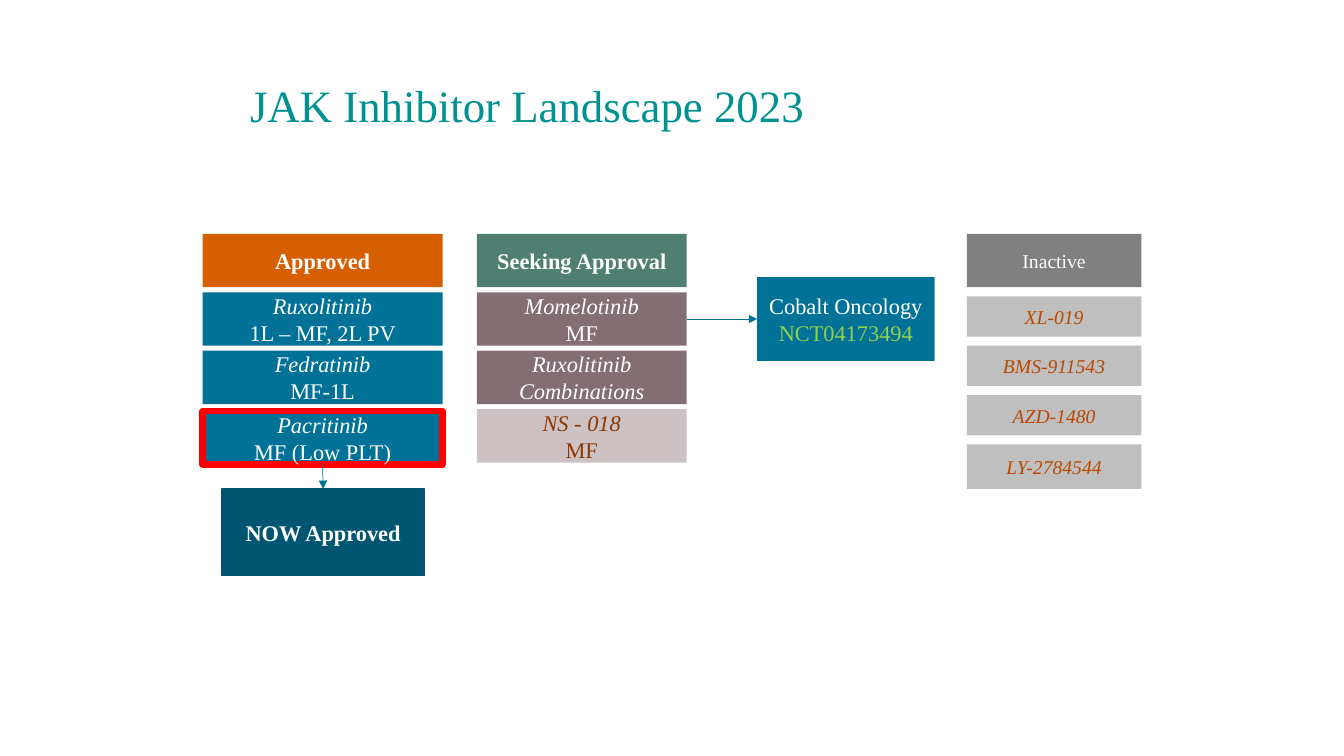
from lxml import etree
from pptx import Presentation
from pptx.dml.color import RGBColor
from pptx.enum.shapes import MSO_CONNECTOR, MSO_SHAPE
from pptx.enum.text import MSO_ANCHOR, PP_ALIGN
from pptx.oxml.ns import qn
from pptx.util import Inches, Pt

COLORS = {
    "title": "009193", "white": "FFFFFF", "blue": "007298", "navy": "005672",
    "navy_edge": "005470", "orange": "D65F00", "green": "4E7F71", "gray": "808080",
    "silver": "BFBFBF", "mauve": "846E73", "pale": "CCC2C4", "brown": "8D3600",
    "rust": "BC4800", "lime": "92D050", "red": "FF0000",
}
FONT = "Times New Roman"

# Grid: (left, width) of each column, and the rows they share
APPROVED, SEEKING, INACTIVE = (2.01, 2.38), (4.73, 2.08), (9.59, 1.73)
TOP, ROW_STEP, ROW_HEIGHT = 2.32, 0.58, 0.53
INACTIVE_TOP, INACTIVE_STEP = 2.94, 0.49

prs = Presentation()
prs.slide_width, prs.slide_height = Inches(13.33), Inches(7.5)
slide = prs.slides.add_slide(prs.slide_layouts[6])


def add_box(column, top, height, fill, lines, size=16, edge=None):
    """Filled rectangle; each line is (text, colour, style), style "b", "i" or ""."""
    left, width = column
    box = slide.shapes.add_shape(MSO_SHAPE.RECTANGLE, Inches(left), Inches(top),
                                 Inches(width), Inches(height))
    box.shadow.inherit = False
    box.fill.solid()
    box.fill.fore_color.rgb = RGBColor.from_string(COLORS[fill])
    if edge:
        box.line.color.rgb = RGBColor.from_string(COLORS[edge[0]])
        box.line.width = Pt(edge[1])
    else:
        box.line.fill.background()
    frame = box.text_frame
    frame.word_wrap = True
    frame.vertical_anchor = MSO_ANCHOR.MIDDLE
    for index, (text, color, style) in enumerate(lines):
        paragraph = frame.add_paragraph() if index else frame.paragraphs[0]
        paragraph.alignment = PP_ALIGN.CENTER
        run = paragraph.add_run()
        run.text = text
        run.font.name, run.font.size = FONT, Pt(size)
        run.font.bold, run.font.italic = style == "b", style == "i"
        run.font.color.rgb = RGBColor.from_string(COLORS[color])
    return box


def add_arrow(start, start_side, end, end_side):
    arrow = slide.shapes.add_connector(MSO_CONNECTOR.STRAIGHT, 0, 0, 0, 0)
    arrow.begin_connect(start, start_side)
    arrow.end_connect(end, end_side)
    arrow.line.color.rgb = RGBColor.from_string(COLORS["blue"])
    arrow.line.width = Pt(0.5)
    etree.SubElement(arrow.line._get_or_add_ln(), qn("a:tailEnd"), type="triangle")
    etree.SubElement(arrow._element.spPr, qn("a:effectLst"))


# Title
title = slide.shapes.add_textbox(Inches(2.41), Inches(0.64), Inches(6.47), Inches(0.86))
title_frame = title.text_frame
title_frame.word_wrap = True
title_frame.vertical_anchor = MSO_ANCHOR.MIDDLE
title_frame.margin_left = title_frame.margin_right = Inches(0.07)
title_frame.margin_top = title_frame.margin_bottom = Inches(0.04)
title_frame.paragraphs[0].line_spacing = 0.9
title_run = title_frame.paragraphs[0].add_run()
title_run.text = "JAK Inhibitor Landscape 2023"
title_run.font.name, title_run.font.size = FONT, Pt(32)
title_run.font.color.rgb = RGBColor.from_string(COLORS["title"])

# Column headers
for column, heading, fill, size, style in [
    (APPROVED, "Approved", "orange", 16, "b"),
    (SEEKING, "Seeking Approval", "green", 16, "b"),
    (INACTIVE, "Inactive", "gray", 14, ""),
]:
    add_box(column, TOP, ROW_HEIGHT, fill, [(heading, "white", style)], size)

# Approved and seeking-approval drugs: name in italics, then indication
drugs = {}
for column, row, fill, color, name, indication, edge in [
    (APPROVED, 1, "blue", "white", "Ruxolitinib", "1L – MF, 2L PV", None),
    (APPROVED, 2, "blue", "white", "Fedratinib", "MF-1L", None),
    (APPROVED, 3.03, "blue", "white", "Pacritinib", "MF (Low PLT)", ("red", 4.5)),
    (SEEKING, 1, "mauve", "white", "Momelotinib", "MF", None),
    (SEEKING, 2, "mauve", "white", "Ruxolitinib Combinations", None, None),
    (SEEKING, 3, "pale", "brown", "NS - 018", "MF", None),
]:
    lines = [(name, color, "i")]
    if indication:
        lines.append((indication, color, ""))
    drugs[name] = add_box(column, TOP + row * ROW_STEP, ROW_HEIGHT, fill, lines, edge=edge)

# Inactive drugs
for row, (name, height) in enumerate([("XL-019", 0.4), ("BMS-911543", 0.4),
                                      ("AZD-1480", 0.4), ("LY-2784544", 0.44)]):
    add_box(INACTIVE, INACTIVE_TOP + row * INACTIVE_STEP, height, "silver",
            [(name, "rust", "i")], 14)

# Outcomes and the arrows leading to them
now_approved = add_box((2.2, 2.01), 4.85, 0.86, "navy",
                       [("NOW Approved", "white", "b")], edge=("navy_edge", 1))
sponsor = add_box((7.51, 1.76), 2.75, 0.83, "blue",
                  [("Cobalt Oncology", "white", ""), ("NCT04173494", "lime", "")])
add_arrow(drugs["Pacritinib"], 2, now_approved, 0)
add_arrow(drugs["Momelotinib"], 3, sponsor, 1)

prs.save("out.pptx")
